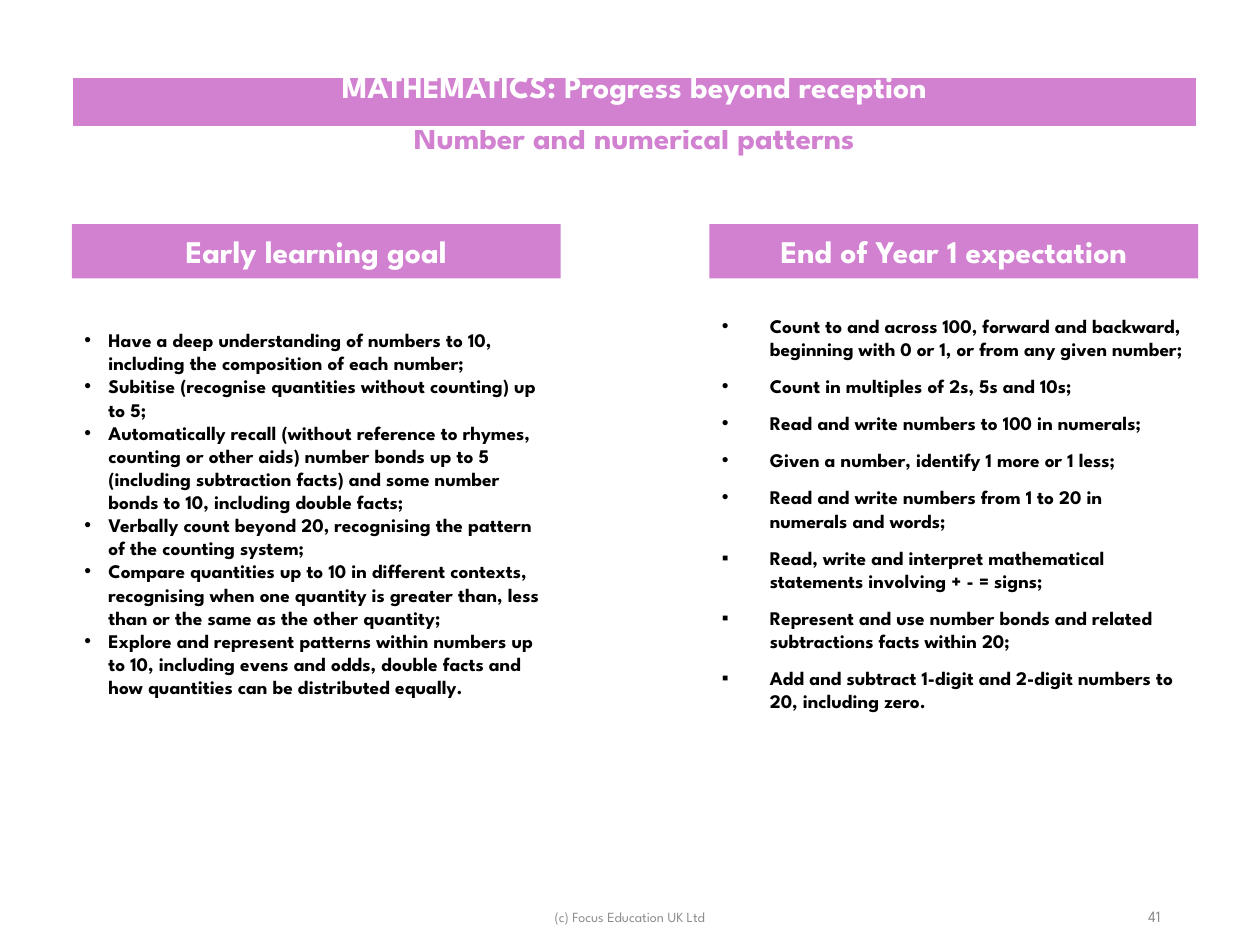
from lxml import etree
from pptx import Presentation
from pptx.dml.color import RGBColor
from pptx.enum import shapes, text
from pptx.oxml import ns
from pptx.util import Inches, Pt

PINK = RGBColor(0xD2, 0x80, 0xD0)
WHITE = RGBColor(0xFF, 0xFF, 0xFF)
BLACK = RGBColor(0, 0, 0)
GREY = RGBColor(0x8C, 0x8C, 0x8C)
FONT = "League Spartan"
LEFT, RIGHT, WIDE = Inches(0.57), Inches(5.63), Inches(3.88)


def style(para, size, color, bold=True, align=text.PP_ALIGN.CENTER):
    para.alignment = align
    font = para.font
    font.name, font.size, font.bold = FONT, Pt(size), bold
    font.color.rgb = color


def edge(cell, side, width):
    line = etree.SubElement(cell._tc.get_or_add_tcPr(), ns.qn("a:" + side), w=str(Pt(width)))
    fill = etree.SubElement(line, ns.qn("a:solidFill"))
    etree.SubElement(fill, ns.qn("a:srgbClr"), val=str(WHITE))


deck = Presentation()
deck.slide_width, deck.slide_height = Inches(10), Inches(7.5)
slide = deck.slides.add_slide(deck.slide_layouts[3])
title = slide.shapes.title
title.element.getparent().remove(title.element)

# Heading table
table = slide.shapes.add_table(2, 1, LEFT, Inches(0.61), Inches(8.93), Inches(0.81)).table
table.first_row = table.horz_banding = False
heads = [("MATHEMATICS: Progress beyond reception", WHITE, 1, 3),
         ("Number and numerical patterns", PINK, 3, 1)]
for row, (words, color, top, base) in enumerate(heads):
    cell = table.cell(row, 0)
    cell.text = words
    cell.margin_top = cell.margin_bottom = 0
    style(cell.text_frame.paragraphs[0], 18, color)
    for side, width in [("lnL", 1), ("lnR", 1), ("lnT", top), ("lnB", base)]:
        edge(cell, side, width)
    if row == 0:
        cell.fill.solid()
        cell.fill.fore_color.rgb = PINK
    else:
        cell.fill.background()

# Two columns: banner, then bullet list
goals = [
    ("•", "Have a deep understanding of numbers to 10, including the composition of each number;"),
    ("•", "Subitise (recognise quantities without counting) up to 5;"),
    ("•", "Automatically recall (without reference to rhymes, counting or other aids) number bonds "
          "up to 5 (including subtraction facts) and some number bonds to 10, including double facts;"),
    ("•", "Verbally count beyond 20, recognising the pattern of the counting system;"),
    ("•", "Compare quantities up to 10 in different contexts, recognising when one quantity is "
          "greater than, less than or the same as the other quantity;"),
    ("•", "Explore and represent patterns within numbers up to 10, including evens and odds, "
          "double facts and how quantities can be distributed equally."),
]
aims = [
    ("•", "Count to and across 100, forward and backward, beginning with 0 or 1, "
          "or from any given number;"),
    ("•", "Count in multiples of 2s, 5s and 10s;"),
    ("•", "Read and write numbers to 100 in numerals;"),
    ("•", "Given a number, identify 1 more or 1 less;"),
    ("•", "Read and write numbers from 1 to 20 in numerals and words;"),
    ("▪", "Read, write and interpret mathematical statements involving + - = signs;"),
    ("▪", "Represent and use number bonds and related subtractions facts within 20;"),
    ("▪", "Add and subtract 1-digit and 2-digit numbers to 20, including zero."),
]
columns = [(1, LEFT, "Early learning goal", goals, 0.19, 0),
           (2, RIGHT, "End of Year 1 expectation", aims, 0.38, 8)]
for slot, x, name, items, indent, gap in columns:
    banner = slide.shapes.add_shape(shapes.MSO_SHAPE.RECTANGLE, x, Inches(1.78), WIDE, Inches(0.43))
    banner.shadow.inherit = False
    banner.fill.solid()
    banner.fill.fore_color.rgb = PINK
    banner.line.fill.background()
    banner.text_frame.text = name
    banner.text_frame.vertical_anchor = text.MSO_ANCHOR.MIDDLE
    style(banner.text_frame.paragraphs[0], 18, WHITE)

    body = slide.placeholders[slot]
    body.left, body.top, body.width, body.height = x, Inches(2.35), WIDE, Inches(3.45)
    frame = body.text_frame
    frame.auto_size = text.MSO_AUTO_SIZE.NONE
    frame.vertical_anchor = text.MSO_ANCHOR.MIDDLE
    frame.text = "\n".join(words for _, words in items)
    for para, (mark, _) in zip(frame.paragraphs, items):
        props = para._p.get_or_add_pPr()
        props.set("marL", str(Inches(indent)))
        props.set("indent", str(-Inches(indent)))
        etree.SubElement(props, ns.qn("a:buFont"), typeface="Arial")
        etree.SubElement(props, ns.qn("a:buChar"), char=mark)
        para.space_before, para.space_after = Pt(0), Pt(gap)
        style(para, 11, BLACK, align=text.PP_ALIGN.LEFT)

# Footer and page number
notes = [("(c) Focus Education UK Ltd", 3.31, 7.08, 3.38, 8, text.PP_ALIGN.CENTER),
         ("41", 7.06, 7.07, 2.25, 9, text.PP_ALIGN.RIGHT)]
for words, x, y, width, size, align in notes:
    box = slide.shapes.add_textbox(Inches(x), Inches(y), Inches(width), Inches(0.4))
    frame = box.text_frame
    frame.word_wrap = True
    frame.vertical_anchor = text.MSO_ANCHOR.MIDDLE
    frame.text = words
    style(frame.paragraphs[0], size, GREY, False, align)

deck.save("out.pptx")
